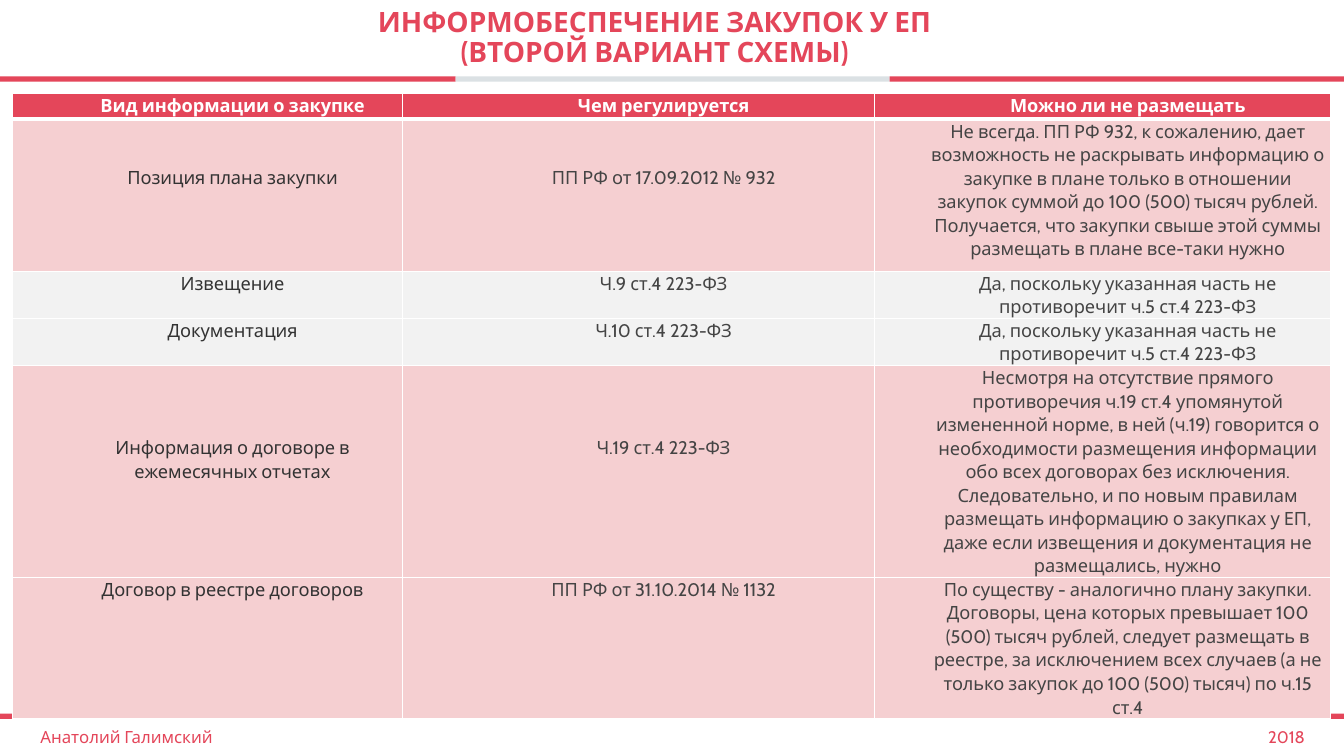
from copy import deepcopy
from dataclasses import dataclass
from itertools import accumulate

from lxml.etree import SubElement
from pptx import Presentation
from pptx.dml.color import RGBColor
from pptx.enum.shapes import MSO_SHAPE
from pptx.enum.text import MSO_ANCHOR, MSO_AUTO_SIZE, PP_ALIGN
from pptx.oxml.ns import qn
from pptx.util import Inches, Pt


@dataclass(frozen=True)
class Theme:
    font: str = "Cabin"
    accent: str = "E4465A"
    neutral: str = "DBE1E4"
    white: str = "FFFFFF"
    rose: str = "F5CFD1"
    grey: str = "F2F2F2"
    label: str = "333333"
    body: str = "444444"
    title_size: int = 20
    table_size: int = 13
    footer_size: int = 12


@dataclass(frozen=True)
class Box:
    left: int
    top: int
    width: int
    height: int

    def area(self, left, top, width, height):
        return Box(
            int(self.left + self.width * left),
            int(self.top + self.height * top),
            int(self.width * width),
            int(self.height * height),
        )

    def frame(self):
        return self.left, self.top, self.width, self.height


THEME = Theme()
PAGE = Box(0, 0, Inches(13.33), Inches(7.5))
BAND_SHARES = (0.339, 0.323, 0.338)
COLUMN_SHARES = (0.296, 0.358, 0.346)
ROW_SHARES = (0.042, 0.251, 0.078, 0.078, 0.349, 0.202)
LINE_SHARE = 0.031

HEADERS = ("Вид информации о закупке", "Чем регулируется", "Можно ли не размещать")
ALLOWED = "Да, поскольку указанная часть не противоречит ч.5 ст.4 223-ФЗ"
ROWS = (
    (THEME.rose, 2, (
        "Позиция плана закупки",
        "ПП РФ от 17.09.2012 № 932",
        "Не всегда. ПП РФ 932, к сожалению, дает возможность не раскрывать "
        "информацию о закупке в плане только в отношении закупок суммой до "
        "100 (500) тысяч рублей. Получается, что закупки свыше этой суммы "
        "размещать в плане все-таки нужно",
    )),
    (THEME.grey, 0, ("Извещение", "Ч.9 ст.4 223-ФЗ", ALLOWED)),
    (THEME.grey, 0, ("Документация", "Ч.10 ст.4 223-ФЗ", ALLOWED)),
    (THEME.rose, 3, (
        "Информация о договоре в ежемесячных отчетах",
        "Ч.19 ст.4 223-ФЗ",
        "Несмотря на отсутствие прямого противоречия ч.19 ст.4 упомянутой "
        "измененной норме, в ней (ч.19) говорится о необходимости размещения "
        "информации обо всех договорах без исключения. Следовательно, и по "
        "новым правилам размещать информацию о закупках у ЕП, даже если "
        "извещения и документация не размещались, нужно",
    )),
    (THEME.rose, 0, (
        "Договор в реестре договоров",
        "ПП РФ от 31.10.2014 № 1132",
        "По существу - аналогично плану закупки. Договоры, цена которых "
        "превышает 100 (500) тысяч рублей, следует размещать в реестре, за "
        "исключением всех случаев (а не только закупок до 100 (500) тысяч) "
        "по ч.15 ст.4",
    )),
)


def write(para, text, size, color, bold=False, align=PP_ALIGN.LEFT, spacing=1.0, indent=0):
    para.text = text
    para.alignment = align
    para.line_spacing = spacing
    if indent:
        para._p.get_or_add_pPr().set("marL", str(Inches(indent)))
    for span in para.runs:
        span.font.name = THEME.font
        span.font.size = Pt(size)
        span.font.bold = bold
        span.font.color.rgb = RGBColor.from_string(color)
    for line_break in para._p.findall(qn("a:br")):
        line_break.append(deepcopy(para.runs[0]._r.rPr))


def add_title(page, box, text):
    title = page.shapes.title
    title.left, title.top, title.width, title.height = box.frame()
    frame = title.text_frame
    frame.word_wrap = True
    frame.auto_size = MSO_AUTO_SIZE.NONE
    frame.vertical_anchor = MSO_ANCHOR.MIDDLE
    write(frame.paragraphs[0], text, THEME.title_size, THEME.accent,
          bold=True, align=PP_ALIGN.CENTER, spacing=0.9)


def add_band(page, box):
    colors = (THEME.accent, THEME.neutral, THEME.accent)
    starts = accumulate(BAND_SHARES, initial=0)
    for start, share, color in zip(starts, BAND_SHARES, colors):
        bar = page.shapes.add_shape(MSO_SHAPE.RECTANGLE, *box.area(start, 0, share, 1).frame())
        bar.shadow.inherit = False
        bar.fill.solid()
        bar.fill.fore_color.rgb = RGBColor.from_string(color)
        bar.line.fill.background()


def add_borders(cell, top=1, bottom=1):
    properties = cell._tc.get_or_add_tcPr()
    for side, points in (("L", 1), ("R", 1), ("T", top), ("B", bottom)):
        border = SubElement(properties, qn(f"a:ln{side}"), w=str(Pt(points)))
        fill = SubElement(border, qn("a:solidFill"))
        SubElement(fill, qn("a:srgbClr"), val=THEME.white)


def fill_cell(cell, text, fill, color, bold=False, top=1, bottom=1, offset=0):
    add_borders(cell, top, bottom)
    cell.fill.solid()
    cell.fill.fore_color.rgb = RGBColor.from_string(fill)
    cell.margin_left = cell.margin_right = Inches(0.04)
    cell.margin_top = offset
    cell.margin_bottom = 0
    write(cell.text_frame.paragraphs[0], text, THEME.table_size, color,
          bold=bold, align=PP_ALIGN.CENTER, spacing=1.07, indent=0.5)


def add_rules_table(page, box):
    table = page.shapes.add_table(len(ROW_SHARES), len(COLUMN_SHARES), *box.frame()).table
    for column, share in zip(table.columns, COLUMN_SHARES):
        column.width = int(box.width * share)
    for row, share in zip(table.rows, ROW_SHARES):
        row.height = int(box.height * share)
    for column, text in enumerate(HEADERS):
        fill_cell(table.cell(0, column), text, THEME.accent, THEME.white, bold=True, bottom=3)
    line = int(PAGE.height * LINE_SHARE)
    for row, (fill, lines_above, texts) in enumerate(ROWS, 1):
        for column, text in enumerate(texts):
            fill_cell(
                table.cell(row, column), text, fill,
                THEME.body if column else THEME.label,
                top=3 if row == 1 else 1,
                offset=lines_above * line if column < 2 else 0,
            )


def add_footer(page, box, author, year):
    notes = (
        (author, box.area(0.03, 0, 0.63, 1), PP_ALIGN.LEFT),
        (year, box.area(0.746, 0, 0.225, 1), PP_ALIGN.RIGHT),
    )
    for text, area, align in notes:
        frame = page.shapes.add_textbox(*area.frame()).text_frame
        frame.word_wrap = True
        frame.vertical_anchor = MSO_ANCHOR.MIDDLE
        frame.margin_left = frame.margin_right = frame.margin_top = frame.margin_bottom = 0
        write(frame.paragraphs[0], text, THEME.footer_size, THEME.accent, align=align)


def build_page(deck, box):
    page = deck.slides.add_slide(deck.slide_layouts[5])
    for top in (0.101, 0.944):
        add_band(page, box.area(0, top, 1, 0.007))
    add_rules_table(page, box.area(0.009, 0.124, 0.981, 0.801))
    add_title(page, box.area(0.148, 0, 0.678, 0.101),
              "ИНФОРМОБЕСПЕЧЕНИЕ ЗАКУПОК У ЕП\v(ВТОРОЙ ВАРИАНТ СХЕМЫ)")
    add_footer(page, box.area(0, 0.951, 1, 0.048), "Анатолий Галимский", "2018")


def main():
    deck = Presentation()
    deck.slide_width, deck.slide_height = PAGE.width, PAGE.height
    build_page(deck, PAGE)
    deck.save("out.pptx")


if __name__ == "__main__":
    main()
